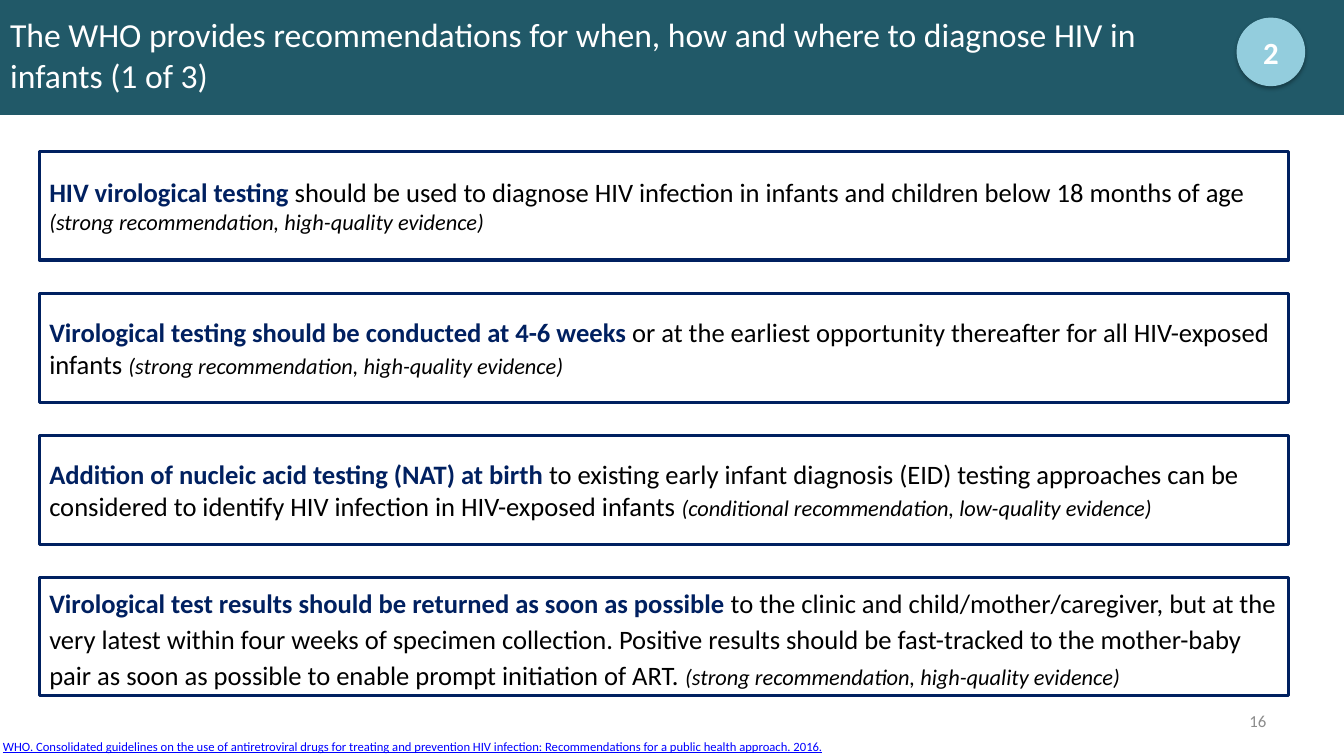
"""Build the slide on recommendations for diagnosing HIV in infants."""
import pptx
import pptx.dml.color
import pptx.enum.shapes
import pptx.enum.text
import pptx.oxml
import pptx.util

Inches = pptx.util.Inches
Pt = pptx.util.Pt
RGBColor = pptx.dml.color.RGBColor
MSO_SHAPE = pptx.enum.shapes.MSO_SHAPE
ALIGN = pptx.enum.text.PP_ALIGN
ANCHOR = pptx.enum.text.MSO_ANCHOR

TEAL = RGBColor(0x21, 0x59, 0x68)
AQUA = RGBColor(0x93, 0xCD, 0xDD)
NAVY = RGBColor(0x00, 0x20, 0x60)
BLACK = RGBColor(0x00, 0x00, 0x00)
WHITE = RGBColor(0xFF, 0xFF, 0xFF)
GRAY = RGBColor(0x8C, 0x8C, 0x8C)
BLUE = RGBColor(0x00, 0x00, 0xFF)

STRONG = "(strong recommendation, high-quality evidence)"
CONDITIONAL = "(conditional recommendation, low-quality evidence)"
RECOMMENDATIONS = [
    ("HIV virological testing ",
     "should be used to diagnose HIV infection in infants and children "
     "below 18 months of age ", STRONG),
    ("Virological testing should be conducted at 4-6 weeks ",
     "or at the earliest opportunity thereafter for all HIV-exposed infants ",
     STRONG),
    ("Addition of nucleic acid testing (NAT) at birth ",
     "to existing early infant diagnosis (EID) testing approaches can be "
     "considered to identify HIV infection in HIV-exposed infants ",
     CONDITIONAL),
    ("Virological test results should be returned as soon as possible ",
     "to the clinic and child/mother/caregiver, but at the very latest within "
     "four weeks of specimen collection. Positive results should be "
     "fast-tracked to the mother-baby pair as soon as possible to enable "
     "prompt initiation of ART. ", STRONG),
]
SHADOW = (
    '<a:effectLst xmlns:a="http://schemas.openxmlformats.org/drawingml/2006/main">'
    '<a:outerShdw blurRad="39370" dist="22860" dir="5400000" rotWithShape="0">'
    '<a:srgbClr val="000000"><a:alpha val="35000"/></a:srgbClr>'
    '</a:outerShdw></a:effectLst>')


def add_text(sp, text, size=19, color=BLACK, bold=False, italic=False,
             underline=False, align=ALIGN.LEFT, anchor=ANCHOR.MIDDLE):
    tf = sp.text_frame
    tf.word_wrap = True
    tf.auto_size = pptx.enum.text.MSO_AUTO_SIZE.NONE
    tf.vertical_anchor = anchor
    p = tf.paragraphs[0]
    p.alignment = align
    r = p.add_run()
    r.text = text
    r.font.name = "Calibri"
    r.font.size = Pt(size)
    r.font.color.rgb = color
    r.font.bold = bold
    r.font.italic = italic
    r.font.underline = underline


prs = pptx.Presentation()
prs.slide_width = Inches(13.33)
prs.slide_height = Inches(7.5)
s = prs.slides.add_slide(prs.slide_layouts[5])

bar = s.shapes.add_shape(MSO_SHAPE.RECTANGLE, Inches(0), Inches(-0.03),
                         Inches(13.33), Inches(1.17))
bar.shadow.inherit = False
bar.fill.solid()
bar.fill.fore_color.rgb = TEAL
bar.line.fill.background()

title = s.shapes.title
bar._element.getparent().insert(2, bar._element)
title.left, title.top = Inches(0), Inches(0)
title.width, title.height = Inches(12.27), Inches(1.08)
add_text(title, "The WHO provides recommendations for when, how and where to "
         "diagnose HIV in infants (1 of 3)", size=24, color=WHITE)

badge = s.shapes.add_shape(MSO_SHAPE.OVAL, Inches(12.27), Inches(0.18),
                           Inches(0.67), Inches(0.67))
badge.fill.solid()
badge.fill.fore_color.rgb = AQUA
badge.line.color.rgb = AQUA
badge.line.width = Pt(0.75)
badge._element.spPr.append(pptx.oxml.parse_xml(SHADOW))
add_text(badge, "2", size=22, color=WHITE, bold=True, align=ALIGN.CENTER)

for i, (lead, detail, evidence) in enumerate(RECOMMENDATIONS):
    last = i == len(RECOMMENDATIONS) - 1
    box = s.shapes.add_shape(MSO_SHAPE.RECTANGLE, Inches(0.39),
                             Inches(1.5 + 1.41 * i), Inches(12.39),
                             Inches(1.17 if last else 1.08))
    box.shadow.inherit = False
    box.fill.background()
    box.line.color.rgb = NAVY
    box.line.width = Pt(2.25)
    add_text(box, lead, color=NAVY, bold=True)
    add_text(box, detail)
    add_text(box, evidence, size=16, italic=True)
    if last:
        p = box.text_frame.paragraphs[0]
        p.line_spacing = 1.14
        p.space_before = Pt(6)

number = s.shapes.add_textbox(Inches(9.55), Inches(6.95), Inches(3.11), Inches(0.4))
add_text(number, "16", size=12, color=GRAY, align=ALIGN.RIGHT)

citation = s.shapes.add_textbox(Inches(-0.07), Inches(7.28), Inches(8.68), Inches(0.25))
add_text(citation, "WHO. Consolidated guidelines on the use of antiretroviral "
         "drugs for treating and prevention HIV infection: Recommendations for "
         "a public health approach. 2016.", size=9, color=BLUE, underline=True,
         anchor=ANCHOR.TOP)

prs.save("out.pptx")
